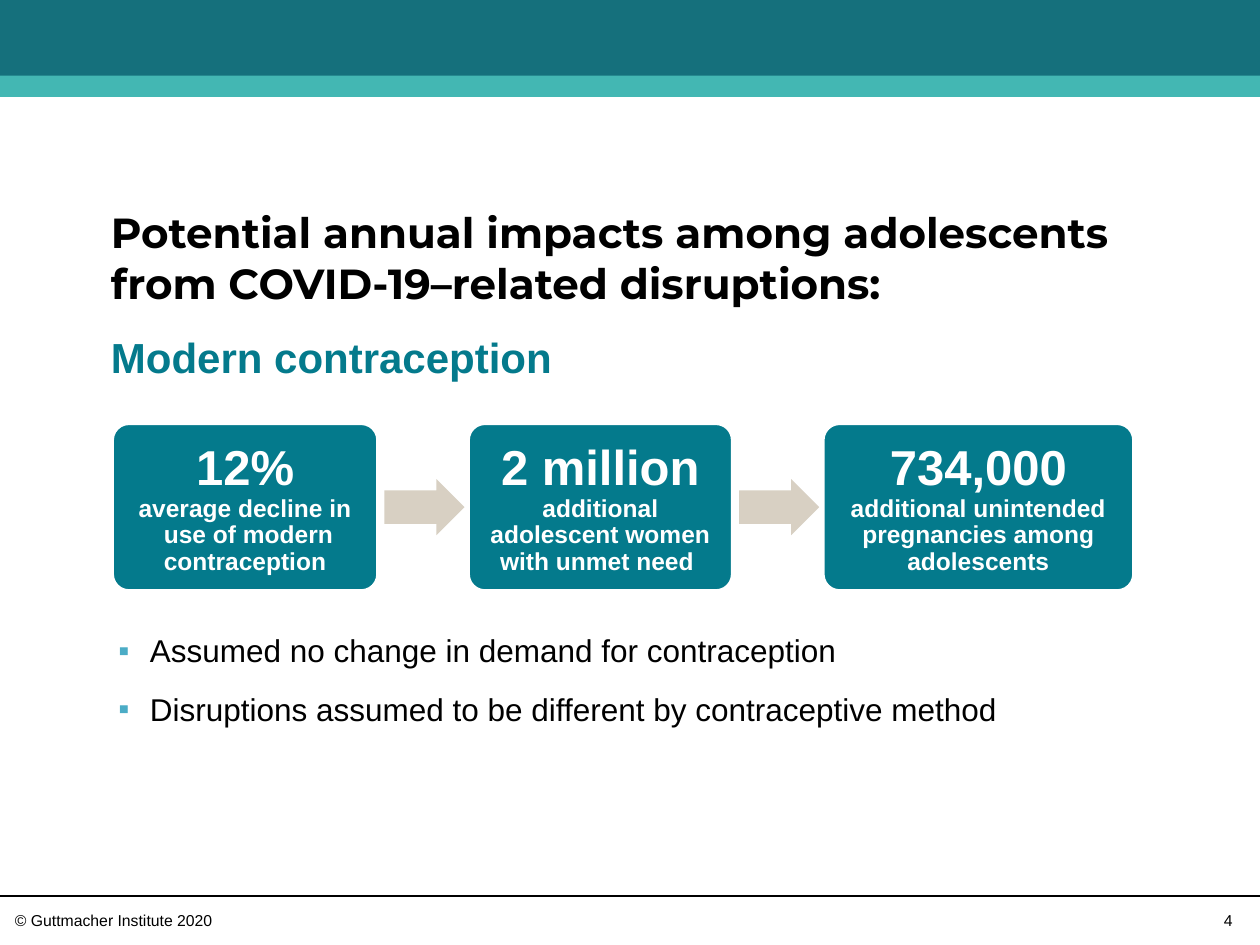
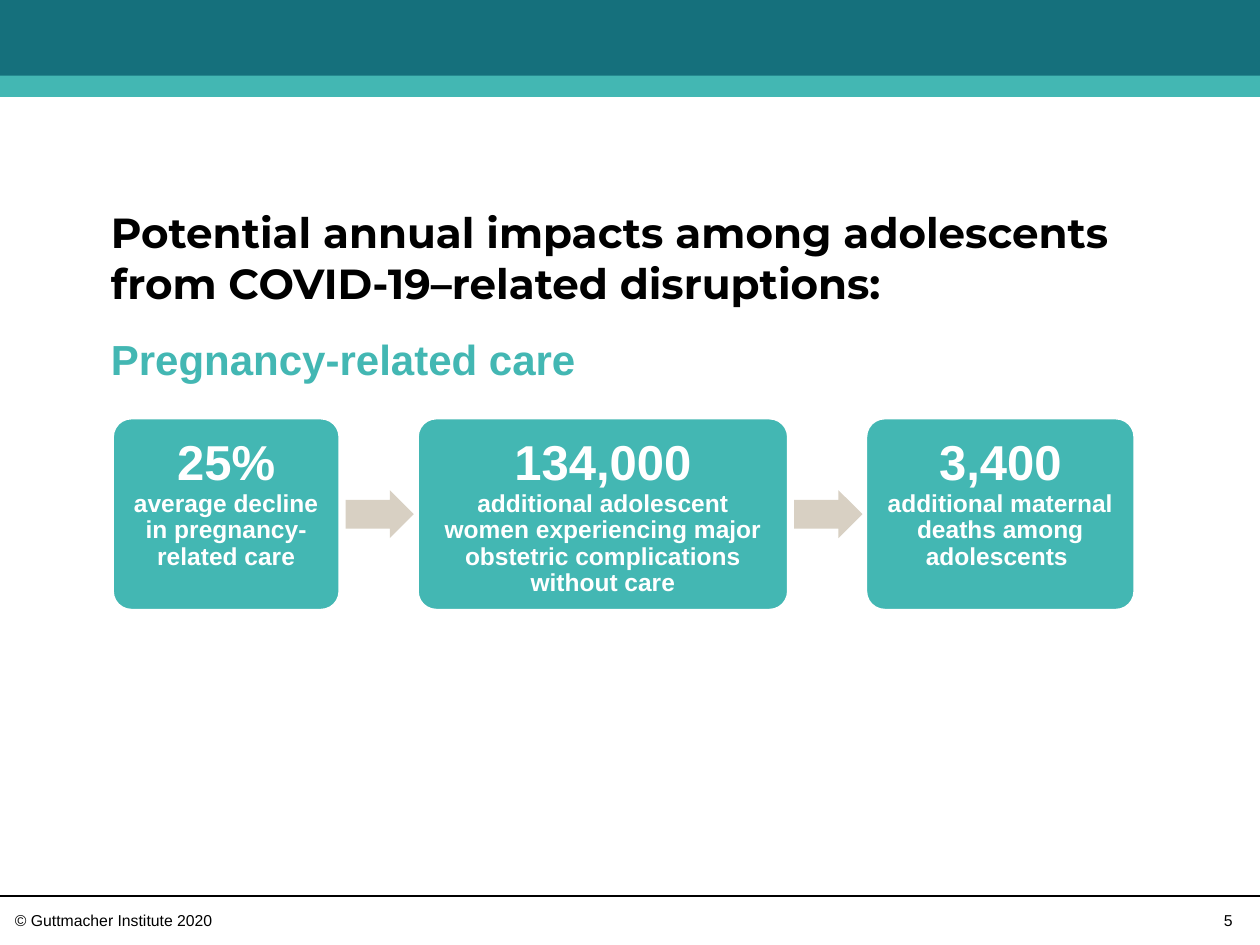
from dataclasses import dataclass

import pptx
import pptx.dml.color
import pptx.enum.shapes
import pptx.enum.text
import pptx.oxml.ns
import pptx.util
from lxml import etree

Pt = pptx.util.Pt
SHAPE = pptx.enum.shapes.MSO_SHAPE
ALIGN = pptx.enum.text.PP_ALIGN
ANCHOR = pptx.enum.text.MSO_ANCHOR

BLACK, WHITE = "000000", "FFFFFF"
DARK_TEAL, TEAL, AQUA = "15707C", "047A8C", "43B7B3"
SAND, BULLET_BLUE = "D8D0C3", "4BACC6"

SLIDE_W, SLIDE_H = 720, 540
LEFT = 63.4
FLOW_LEFT = 64.1
NO_INSET = (0, 0, 0, 0)

TITLE = "Potential annual impacts among adolescents from COVID-19–related disruptions:"
FOOTER = "© Guttmacher Institute 2020"

TITLE_FONT = dict(name="Montserrat", size=Pt(24), bold=True)
SUBTITLE_FONT = dict(name="Arial", size=Pt(24), bold=True)
FIGURE_FONT = dict(name="Arial", size=Pt(28), bold=True)
CAPTION_FONT = dict(name="Arial", size=Pt(14), bold=True)
BODY_FONT = dict(name="Arial", size=Pt(18))
FOOTER_FONT = dict(name="Arial", size=Pt(9))


@dataclass
class Step:
    width: float
    figure: str
    caption: tuple[str, ...]


@dataclass
class Impact:
    number: int
    subtitle: str
    subtitle_top: float
    color: str
    top: float
    height: float
    gap: float
    steps: tuple[Step, ...]
    notes: tuple[str, ...] = ()


IMPACTS = (
    Impact(4, "Modern contraception", 189.4, TEAL, 241.9, 95.8, 51.5, (
        Step(151.9, "12%", ("average decline in", " use of modern contraception")),
        Step(151.2, "2 million", ("additional adolescent women with unmet need ",)),
        Step(177.8, "734,000", ("additional unintended pregnancies among adolescents",)),
    ), (
        "Assumed no change in demand for contraception",
        "Disruptions assumed to be different by contraceptive method",
    )),
    Impact(5, "Pregnancy-related care", 190.4, AQUA, 238.7, 110.2, 43.9, (
        Step(130.3, "25%", ("average decline in pregnancy-related care",)),
        Step(212.4, "134,000", ("additional adolescent women experiencing major "
                                "obstetric complications without care",)),
        Step(154.1, "3,400", ("additional maternal deaths among adolescents ",)),
    )),
)


def rgb(color: str):
    return pptx.dml.color.RGBColor.from_string(color)


def set_font(font, style: dict, color: str) -> None:
    for name, value in style.items():
        setattr(font, name, value)
    font.color.rgb = rgb(color)


def add_run(p, text: str, style: dict, color: str) -> None:
    r = p.add_run()
    r.text = text
    set_font(r.font, style, color)


def set_frame(tf, insets: tuple, anchor=ANCHOR.TOP) -> None:
    tf.word_wrap = True
    tf.vertical_anchor = anchor
    sides = ("margin_left", "margin_top", "margin_right", "margin_bottom")
    for side, inset in zip(sides, insets):
        setattr(tf, side, Pt(inset))


def add_text(s, box: tuple, text: str, style: dict, color: str = BLACK,
             align=ALIGN.LEFT, insets: tuple = NO_INSET, anchor=ANCHOR.TOP) -> None:
    tf = s.shapes.add_textbox(*map(Pt, box)).text_frame
    set_frame(tf, insets, anchor)
    p = tf.paragraphs[0]
    p.alignment = align
    add_run(p, text, style, color)


def add_shape(s, kind, box: tuple, fill: str, adjustments: tuple = ()):
    sp = s.shapes.add_shape(kind, *map(Pt, box))
    sp.shadow.inherit = False
    sp.fill.solid()
    sp.fill.fore_color.rgb = rgb(fill)
    sp.line.fill.background()
    for i, value in enumerate(adjustments):
        sp.adjustments[i] = value
    return sp


def add_frame(s, number: int) -> None:
    """Draw the header bands, footer rule, copyright line and slide number."""
    add_shape(s, SHAPE.RECTANGLE, (0, 0, SLIDE_W, 55.4), DARK_TEAL)
    add_shape(s, SHAPE.RECTANGLE, (0, 43.2, SLIDE_W, 12.2), AQUA)
    rule = s.shapes.add_connector(pptx.enum.shapes.MSO_CONNECTOR.STRAIGHT,
                                  Pt(0), Pt(512), Pt(SLIDE_W), Pt(512))
    rule.line.color.rgb = rgb(BLACK)
    rule.line.width = Pt(0.75)
    etree.SubElement(rule._element.spPr, pptx.oxml.ns.qn("a:effectLst"))
    add_text(s, (8.6, 520.6, 132.5, 10.8), FOOTER, FOOTER_FONT)
    add_text(s, (679, 517, 32.4, 18), str(number), FOOTER_FONT,
             align=ALIGN.RIGHT, insets=(7.2, 3.6, 7.2, 3.6))


def add_step(s, step: Step, box: tuple, color: str) -> None:
    sp = add_shape(s, SHAPE.ROUNDED_RECTANGLE, box, color, (0.1,))
    sp.line.color.rgb = rgb(WHITE)
    sp.line.width = Pt(2)
    set_frame(sp.text_frame, (8.6,) * 4)
    p = sp.text_frame.paragraphs[0]
    p.alignment = ALIGN.CENTER
    p.line_spacing = 0.9
    add_run(p, step.figure, FIGURE_FONT, WHITE)
    for line in step.caption:
        p.add_line_break()
        add_run(p, line, CAPTION_FONT, WHITE)


def add_flow(s, impact: Impact) -> None:
    """Draw the steps from left to right with an arrow in each gap."""
    x = FLOW_LEFT
    gap = impact.gap
    arrow_w = 0.89 * gap
    arrow_h = 0.7 * arrow_w
    arrow_top = impact.top + (impact.height - arrow_h) / 2
    for i, step in enumerate(impact.steps):
        if i:
            add_shape(s, SHAPE.RIGHT_ARROW,
                      (x - 0.93 * gap, arrow_top, arrow_w, arrow_h), SAND, (0.6, 0.5))
        add_step(s, step, (x, impact.top, step.width, impact.height), impact.color)
        x += step.width + gap


def set_bullet(p) -> None:
    pPr = p._p.get_or_add_pPr()
    pPr.set("marL", str(Pt(18)))
    pPr.set("indent", str(Pt(-18)))
    qn = pptx.oxml.ns.qn
    color = etree.SubElement(pPr, qn("a:buClr"))
    etree.SubElement(color, qn("a:srgbClr"), val=BULLET_BLUE)
    etree.SubElement(pPr, qn("a:buFont"), typeface="Arial")
    etree.SubElement(pPr, qn("a:buChar"), char="▪")


def add_notes_list(s, notes: tuple) -> None:
    tf = s.shapes.add_textbox(*map(Pt, (67.7, 360.7, 580.3, 66.2))).text_frame
    set_frame(tf, NO_INSET)
    for i, note in enumerate(notes):
        p = tf.add_paragraph() if i else tf.paragraphs[0]
        set_bullet(p)
        if i:
            p.space_before = Pt(12)
        add_run(p, note, BODY_FONT, BLACK)


def main() -> None:
    prs = pptx.Presentation()
    prs.slide_width, prs.slide_height = Pt(SLIDE_W), Pt(SLIDE_H)
    for impact in IMPACTS:
        s = prs.slides.add_slide(prs.slide_layouts[6])
        add_frame(s, impact.number)
        add_text(s, (LEFT, 117.4, 617, 58.3), TITLE, TITLE_FONT, anchor=ANCHOR.BOTTOM)
        add_text(s, (LEFT, impact.subtitle_top, 617, 28.8), impact.subtitle,
                 SUBTITLE_FONT, impact.color)
        add_flow(s, impact)
        if impact.notes:
            add_notes_list(s, impact.notes)
    prs.save("out.pptx")


if __name__ == "__main__":
    main()
